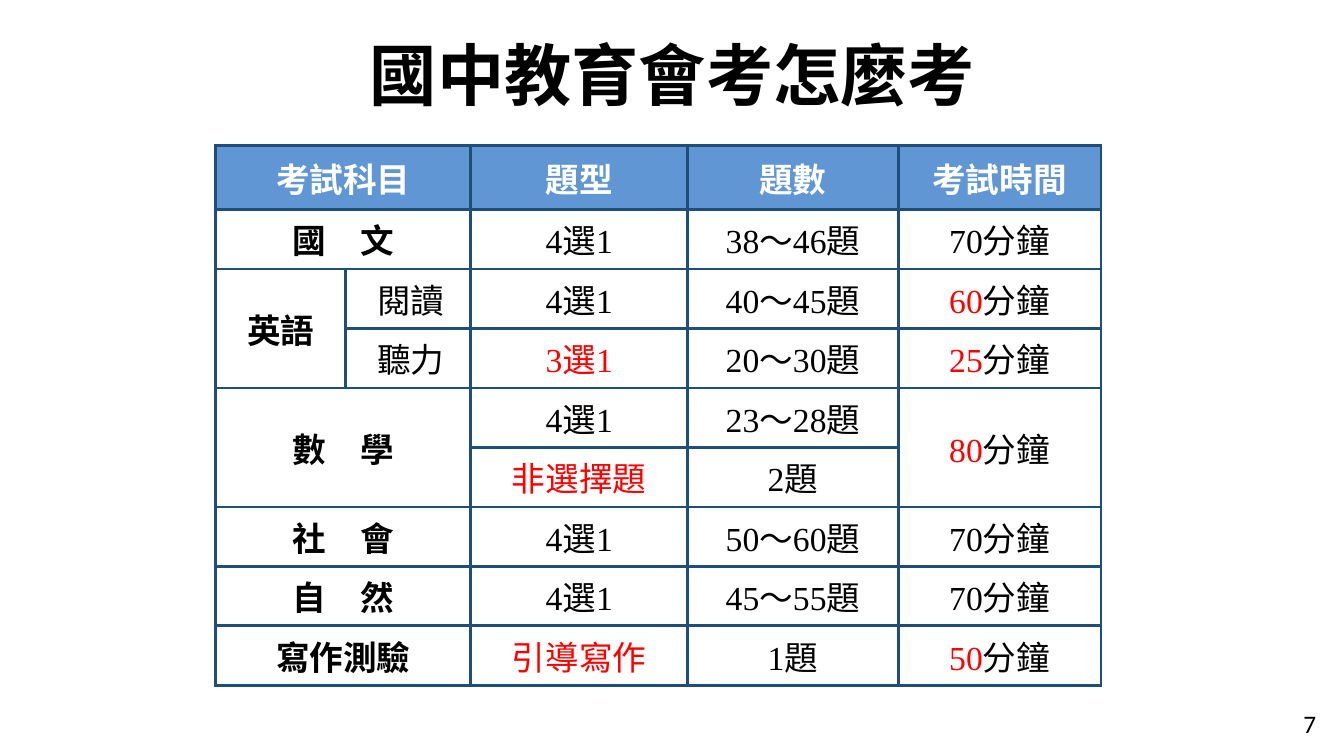
from lxml.etree import SubElement
from pptx import Presentation
from pptx.dml.color import RGBColor
from pptx.enum.text import MSO_ANCHOR, PP_ALIGN
from pptx.oxml.ns import qn
from pptx.util import Pt

EMU_PER_PX = 9144  # 100 px to the inch
COLORS = {
    "black": "000000",
    "white": "FFFFFF",
    "red": "FF0000",
    "header": "5F96D3",
    "border": "1F4E79",
}
CJK_FONT = "Noto Sans CJK SC"

COLUMN_WIDTHS = [129, 124, 215, 209, 201]
HEADER_HEIGHT, ROW_HEIGHT = 64, 59
# Text before a bar is red; None is a cell covered by a merge
EXAM_ROWS = [
    ["考試科目", None, "題型", "題數", "考試時間"],
    ["國　文", None, "4選1", "38～46題", "70分鐘"],
    ["英語", "閱讀", "4選1", "40～45題", "60|分鐘"],
    [None, "聽力", "3選1|", "20～30題", "25|分鐘"],
    ["數　學", None, "4選1", "23～28題", "80|分鐘"],
    [None, None, "非選擇題|", "2題", None],
    ["社　會", None, "4選1", "50～60題", "70分鐘"],
    ["自　然", None, "4選1", "45～55題", "70分鐘"],
    ["寫作測驗", None, "引導寫作|", "1題", "50|分鐘"],
]
# First row, first column, last row, last column
SUBJECT_MERGES = [(row, 0, row, 1) for row in (0, 1, 6, 7, 8)]
MERGES = SUBJECT_MERGES + [(2, 0, 3, 0), (4, 0, 5, 1), (4, 4, 5, 4)]


def px(length):
    return length * EMU_PER_PX


def color(name):
    return RGBColor.from_string(COLORS[name])


def format_run(run, size, font, color_name, bold=False):
    run.font.size = Pt(size)
    run.font.bold = bold
    run.font.color.rgb = color(color_name)
    run.font.name = font
    SubElement(run.font._element, qn("a:ea")).set("typeface", CJK_FONT)


def add_text(slide, box, text, size, font, bold=False, align=PP_ALIGN.LEFT):
    shape = slide.shapes.add_textbox(*map(px, box))
    frame = shape.text_frame
    frame.word_wrap = True
    frame.vertical_anchor = MSO_ANCHOR.MIDDLE
    frame.text = text
    paragraph = frame.paragraphs[0]
    paragraph.alignment = align
    format_run(paragraph.runs[0], size, font, "black", bold)


def set_borders(cell, width):
    properties = cell._tc.get_or_add_tcPr()
    for index, side in enumerate(("a:lnL", "a:lnR", "a:lnT", "a:lnB")):
        line = SubElement(properties, qn(side), w=str(Pt(width)))
        fill = SubElement(line, qn("a:solidFill"))
        SubElement(fill, qn("a:srgbClr"), val=COLORS["border"])
        properties.insert(index, line)


def fill_cell(cell, text, is_header, is_subject, is_subtest):
    cell.vertical_anchor = MSO_ANCHOR.MIDDLE
    inset = px(0 if is_subtest else 2)
    cell.margin_left = cell.margin_right = inset
    cell.margin_top = cell.margin_bottom = inset
    paragraph = cell.text_frame.paragraphs[0]
    paragraph.alignment = PP_ALIGN.CENTER
    if is_subtest:
        paragraph._p.get_or_add_pPr().set("marL", str(px(5)))
    red_text, _, plain_text = text.rpartition("|")
    plain_color = "white" if is_header else "black"
    for part, color_name in ((red_text, "red"), (plain_text, plain_color)):
        if part:
            run = paragraph.add_run()
            run.text = part
            format_run(run, 24, "Times New Roman", color_name, is_header or is_subject)


def add_exam_table(slide, box):
    frame = slide.shapes.add_table(len(EXAM_ROWS), len(COLUMN_WIDTHS), *map(px, box))
    table = frame.table
    table.first_row = table.horz_banding = False
    for column, width in zip(table.columns, COLUMN_WIDTHS):
        column.width = px(width)
    for index, row in enumerate(table.rows):
        row.height = px(ROW_HEIGHT if index else HEADER_HEIGHT)
    for top, left, bottom, right in MERGES:
        table.cell(top, left).merge(table.cell(bottom, right))

    for row_index, texts in enumerate(EXAM_ROWS):
        is_header = row_index == 0
        for column_index, text in enumerate(texts):
            cell = table.cell(row_index, column_index)
            if is_header:
                cell.fill.solid()
                cell.fill.fore_color.rgb = color("header")
            else:
                cell.fill.background()
            set_borders(cell, 2.25)
            if text:
                is_subtest = column_index == 1
                fill_cell(cell, text, is_header, column_index == 0, is_subtest)


def build_exam_slide(presentation):
    slide = presentation.slides.add_slide(presentation.slide_layouts[6])
    # Title
    add_text(slide, (92, 1, 1150, 145), "國中教育會考怎麼考", 48, CJK_FONT,
             bold=True, align=PP_ALIGN.CENTER)
    # Subjects, question types, counts and times
    table_height = HEADER_HEIGHT + ROW_HEIGHT * (len(EXAM_ROWS) - 1)
    add_exam_table(slide, (214, 144, sum(COLUMN_WIDTHS), table_height))
    # Page number
    add_text(slide, (1283, 698, 57, 40), "7", 18, "Calibri")


def main():
    presentation = Presentation()
    presentation.slide_width = px(1333)
    presentation.slide_height = px(750)
    build_exam_slide(presentation)
    presentation.save("out.pptx")


if __name__ == "__main__":
    main()
